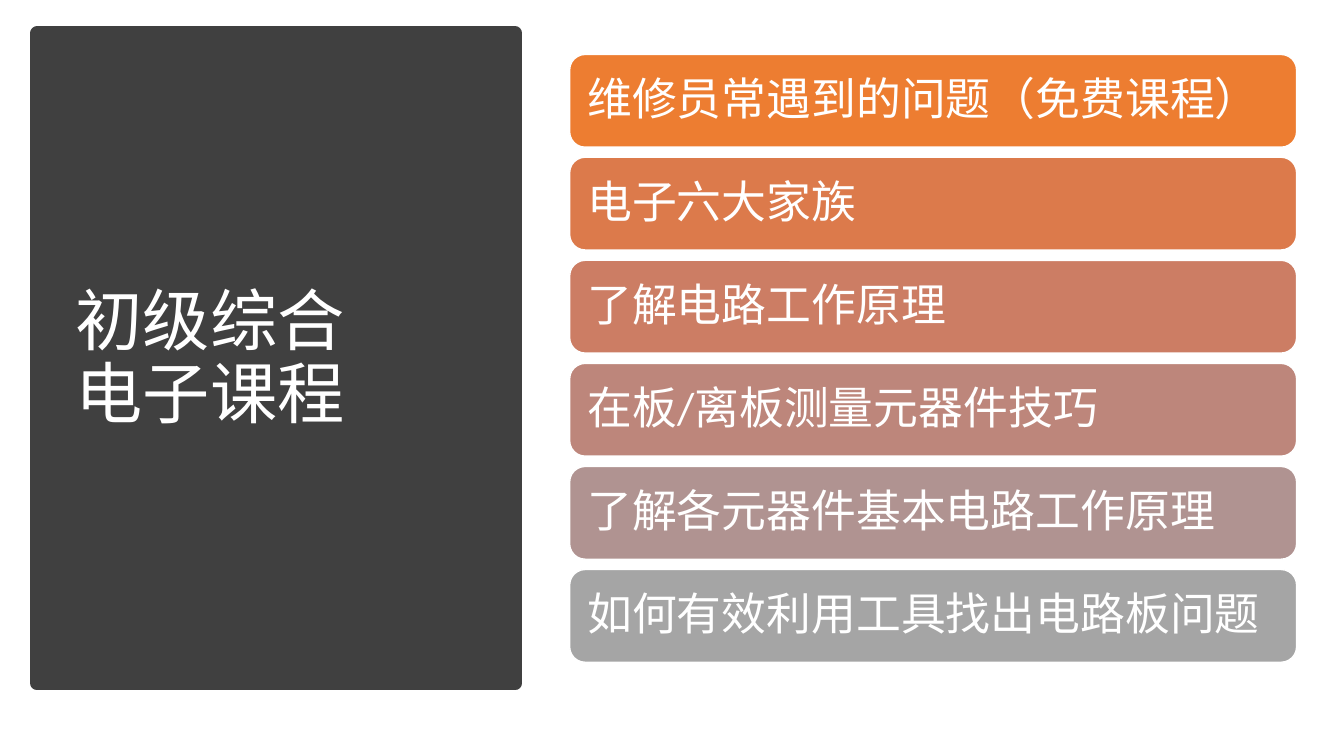
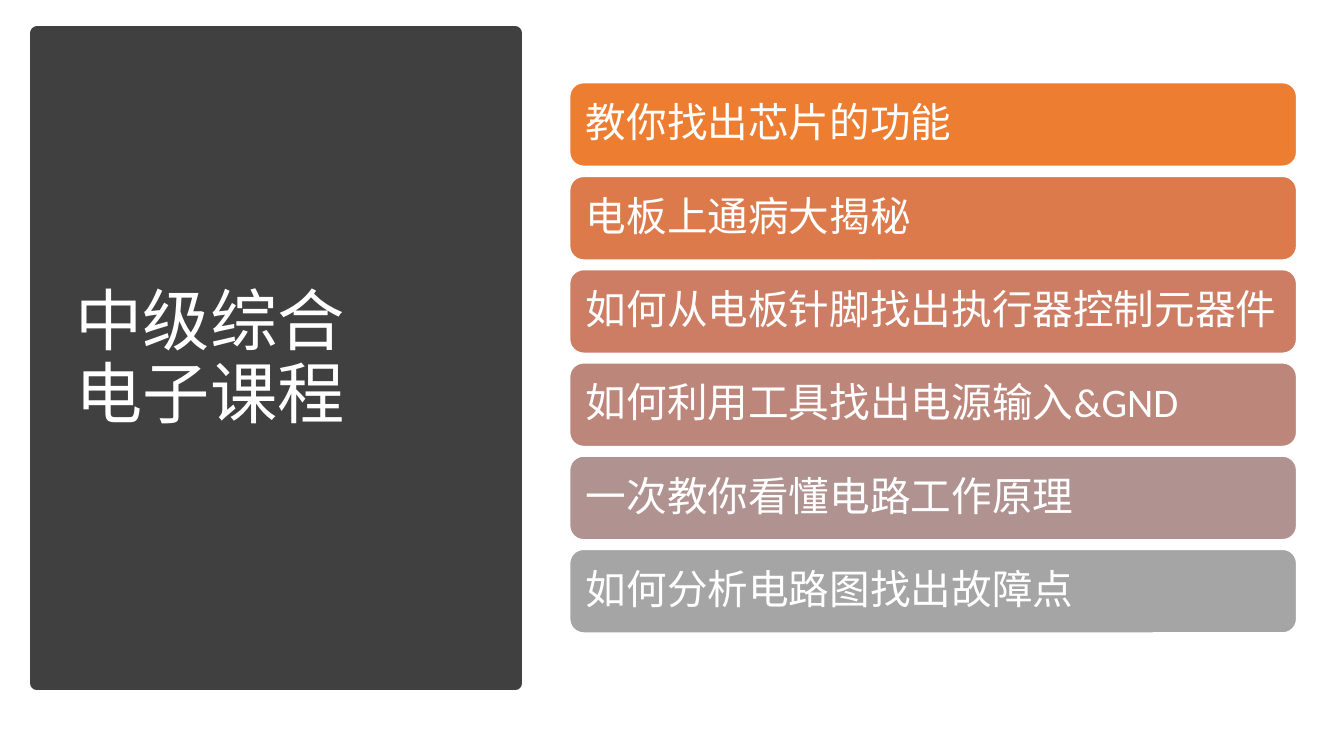
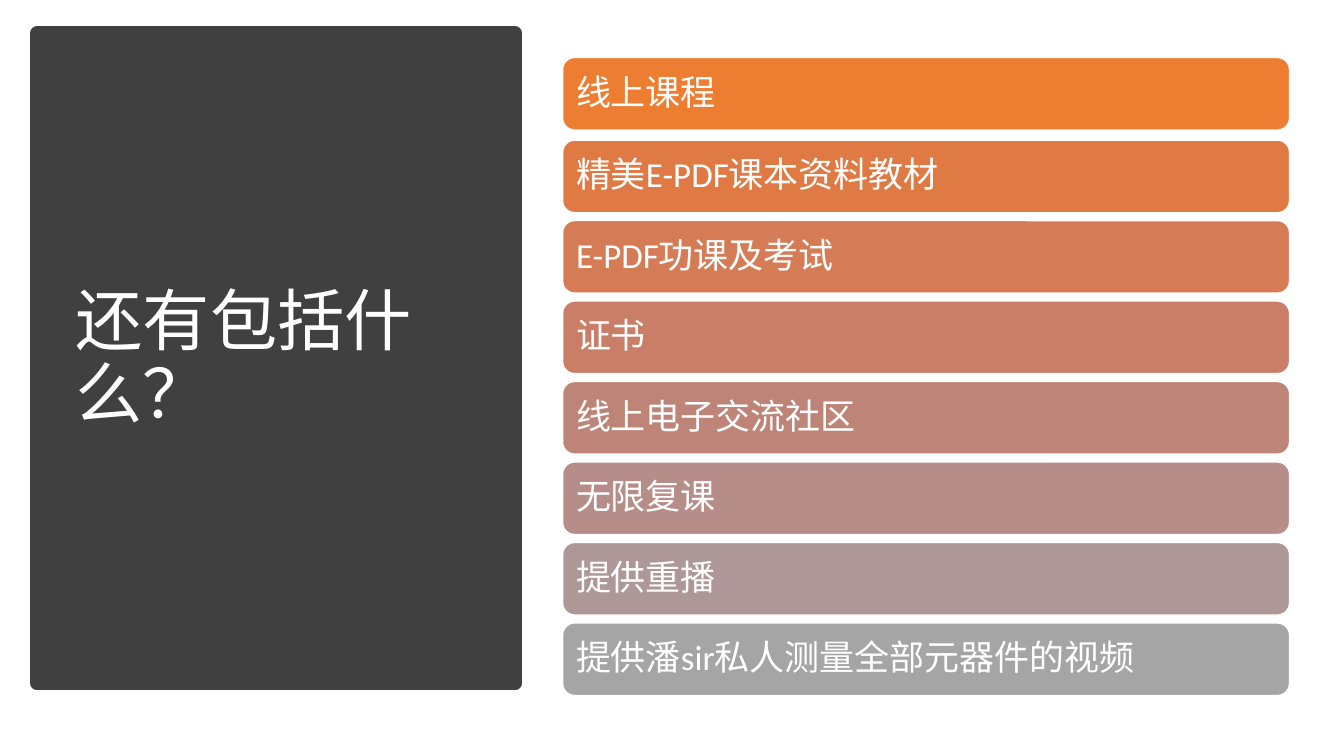
"""Build three course overview slides with a dark title panel and fading bars."""
import colorsys
from dataclasses import dataclass

from pptx import Presentation
from pptx import util as u
from pptx.dml import color
from pptx.enum import shapes, text


@dataclass(frozen=True)
class Theme:
    """Colours, type and fixed places shared by all slides."""
    font: str = "Calibri"
    title_size: int = 48
    line_spacing: float = 0.9
    light: str = "FFFFFF"
    dark: str = "404040"
    first_bar: str = "ED7D31"
    last_bar: str = "A5A5A5"
    panel_box: tuple = (0.37, 0.33, 4.74, 6.45)
    title_box: tuple = (0.65, 0.7, 4.16, 5.75)
    bar_width: float = 7.21


@dataclass(frozen=True)
class Course:
    """One slide: its title, its topics and the measures of its bars."""
    title: str
    topics: tuple
    left: float
    first_top: float
    second_top: float
    last_top: float
    bar_height: float
    text_size: int
    inset: float


THEME = Theme()

COURSES = (
    Course("初级综合\v电子课程",
           ("维修员常遇到的问题（免费课程）", "电子六大家族", "了解电路工作原理",
            "在板/离板测量元器件技巧", "了解各元器件基本电路工作原理",
            "如何有效利用工具找出电路板问题"),
           left=5.65, first_top=0.54, second_top=1.56, last_top=5.65,
           bar_height=0.92, text_size=32, inset=0.13),
    Course("中级综合\v电子课程",
           ("教你找出芯片的功能", "电板上通病大揭秘",
            "如何从电板针脚找出执行器控制元器件", "如何利用工具找出电源输入&GND",
            "一次教你看懂电路工作原理", "如何分析电路图找出故障点"),
           left=5.65, first_top=0.82, second_top=1.75, last_top=5.45,
           bar_height=0.83, text_size=29, inset=0.12),
    Course("还有包括什么？",
           ("线上课程", "精美E-PDF课本资料教材", "E-PDF功课及考试", "证书",
            "线上电子交流社区", "无限复课", "提供重播",
            "提供潘sir私人测量全部元器件的视频"),
           left=5.58, first_top=0.57, second_top=1.39, last_top=6.18,
           bar_height=0.72, text_size=25, inset=0.1),
)


def apply(target, formats):
    """Set every attribute named in formats on target."""
    for name, value in formats.items():
        setattr(target, name, value)


def to_hls(hex_code):
    """Turn a hex colour into hue, lightness and saturation."""
    return colorsys.rgb_to_hls(*(part / 255 for part in bytes.fromhex(hex_code)))


def fade(share):
    """Give the bar colour at a share of the way from first to last."""
    ends = zip(to_hls(THEME.first_bar), to_hls(THEME.last_bar))
    mixed = colorsys.hls_to_rgb(*(a + (b - a) * share for a, b in ends))
    return color.RGBColor(*(round(part * 255) for part in mixed))


def write(holder, words, size, inset_x, inset_y):
    """Write light, left-aligned, vertically centred text into a shape."""
    frame = holder.text_frame
    frame.text = words
    apply(frame, {
        "word_wrap": True,
        "auto_size": text.MSO_AUTO_SIZE.NONE,
        "vertical_anchor": text.MSO_ANCHOR.MIDDLE,
        "margin_left": u.Inches(inset_x), "margin_right": u.Inches(inset_x),
        "margin_top": u.Inches(inset_y), "margin_bottom": u.Inches(inset_y),
    })
    for paragraph in frame.paragraphs:
        apply(paragraph, {"alignment": text.PP_ALIGN.LEFT,
                          "line_spacing": THEME.line_spacing})
        for run in paragraph.runs:
            apply(run.font, {"name": THEME.font, "size": u.Pt(size)})
            run.font.color.rgb = color.RGBColor.from_string(THEME.light)


def add_block(slide, kind, box, fill, line, line_width):
    """Add a flat filled shape with an outline."""
    block = slide.shapes.add_shape(kind, *map(u.Inches, box))
    block.shadow.inherit = False
    block.fill.solid()
    block.fill.fore_color.rgb = fill
    block.line.color.rgb = color.RGBColor.from_string(line)
    block.line.width = u.Pt(line_width)
    return block


def add_title(slide, words):
    """Place the title on a dark panel that lies behind it."""
    panel = add_block(slide, shapes.MSO_SHAPE.RECTANGLE, THEME.panel_box,
                      color.RGBColor.from_string(THEME.dark), THEME.dark, 10)
    title = slide.shapes.title
    title._element.addprevious(panel._element)
    places = map(u.Inches, THEME.title_box)
    apply(title, dict(zip(("left", "top", "width", "height"), places)))
    write(title, words, THEME.title_size, 0.1, 0.05)


def add_topics(slide, course):
    """Stack one rounded bar per topic, fading from first to last colour."""
    last = len(course.topics) - 1
    step = (course.last_top - course.second_top) / (last - 1)
    for index, topic in enumerate(course.topics):
        top = course.second_top + (index - 1) * step if index else course.first_top
        box = (course.left, top, THEME.bar_width, course.bar_height)
        bar = add_block(slide, shapes.MSO_SHAPE.ROUNDED_RECTANGLE, box,
                        fade(index / last), THEME.light, 1)
        write(bar, topic, course.text_size, course.inset, course.inset)


def main():
    """Build and save the presentation."""
    deck = Presentation()
    apply(deck, {"slide_width": u.Inches(13.33), "slide_height": u.Inches(7.5)})
    title_only = deck.slide_layouts.get_by_name("Title Only")
    for course in COURSES:
        slide = deck.slides.add_slide(title_only)
        add_title(slide, course.title)
        add_topics(slide, course)
    deck.save("out.pptx")


if __name__ == "__main__":
    main()
